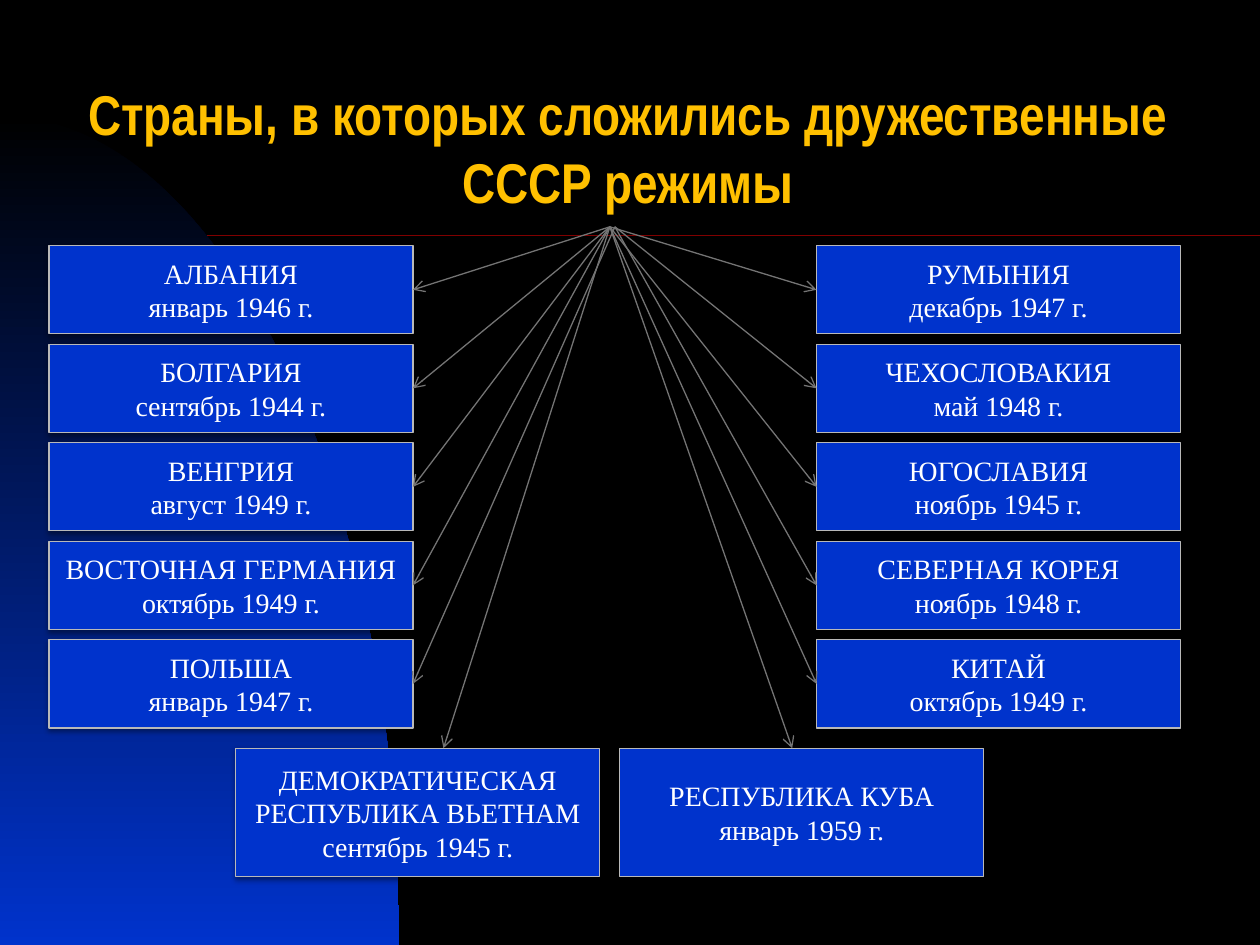
from lxml import etree
from pptx import Presentation
from pptx.dml.color import RGBColor
from pptx.enum.shapes import MSO_CONNECTOR, MSO_SHAPE
from pptx.enum.text import MSO_ANCHOR, PP_ALIGN
from pptx.oxml.ns import qn
from pptx.util import Pt

STRAIGHT = MSO_CONNECTOR.STRAIGHT
RECT = MSO_SHAPE.RECTANGLE
CENTER = PP_ALIGN.CENTER
MIDDLE, BOTTOM = MSO_ANCHOR.MIDDLE, MSO_ANCHOR.BOTTOM
LEFT_SIDE, RIGHT_SIDE = 1, 3

COLORS = {name: RGBColor.from_string(value) for name, value in {
    "black": "000000", "blue": "0033CC", "border": "B9B9B9", "rule": "800000",
    "arrow": "747474", "title": "FFC000", "white": "FFFFFF",
}.items()}

BOX_W, BOX_H = 208, 50.4
TOP, PITCH = 140.4, 56.3
HUB_X, HUB_Y = 348.5, 129.6
HUB_SHIFT = 2.9

# x, side the arrow enters, rows whose arrow starts slightly right, countries
COLUMNS = [
    (28, RIGHT_SIDE, {4}, [
        ("АЛБАНИЯ", "январь 1946 г."),
        ("БОЛГАРИЯ", "сентябрь 1944 г."),
        ("ВЕНГРИЯ", "август 1949 г."),
        ("ВОСТОЧНАЯ ГЕРМАНИЯ", "октябрь 1949 г."),
        ("ПОЛЬША", "январь 1947 г."),
    ]),
    (466.6, LEFT_SIDE, {1, 3}, [
        ("РУМЫНИЯ", "декабрь 1947 г."),
        ("ЧЕХОСЛОВАКИЯ", "май 1948 г."),
        ("ЮГОСЛАВИЯ", "ноябрь 1945 г."),
        ("СЕВЕРНАЯ КОРЕЯ", "ноябрь 1948 г."),
        ("КИТАЙ", "октябрь 1949 г."),
    ]),
]
BOTTOM_Y, BOTTOM_H = 427.6, 73.4
# x, arrow tip x, country, date
BOTTOM_ROW = [
    (134.8, 253.4, "ДЕМОКРАТИЧЕСКАЯ РЕСПУБЛИКА ВЬЕТНАМ", "сентябрь 1945 г."),
    (354.2, 452.7, "РЕСПУБЛИКА КУБА", "январь 1959 г."),
]


def add_box(x, y, h, lines):
    sp = s.shapes.add_shape(RECT, Pt(x), Pt(y), Pt(BOX_W), Pt(h))
    sp.fill.solid()
    sp.fill.fore_color.rgb = COLORS["blue"]
    sp.line.color.rgb = COLORS["border"]
    sp.line.width = Pt(0.75)
    sp.shadow.inherit = False
    effects = sp._element.spPr.find(qn("a:effectLst"))
    shadow = etree.SubElement(effects, qn("a:outerShdw"), blurRad=str(Pt(3.1)),
                              dist=str(Pt(1.6)), dir="5400000", rotWithShape="0")
    color = etree.SubElement(shadow, qn("a:srgbClr"), val=str(COLORS["black"]))
    etree.SubElement(color, qn("a:alpha"), val="38000")
    tf = sp.text_frame
    tf.word_wrap = True
    tf.vertical_anchor = MIDDLE
    for i, line in enumerate(lines):
        p = tf.paragraphs[0] if i == 0 else tf.add_paragraph()
        p.alignment = CENTER
        r = p.add_run()
        r.text = line
        r.font.size = Pt(16)
        r.font.name = "Times New Roman"
        r.font.color.rgb = COLORS["white"]
    return sp


def add_line(x1, y1, x2, y2, color, width, arrow=False):
    cx = s.shapes.add_connector(STRAIGHT, Pt(x1), Pt(y1), Pt(x2), Pt(y2))
    cx.line.color.rgb = COLORS[color]
    cx.line.width = Pt(width)
    if arrow:
        etree.SubElement(cx.line._get_or_add_ln(), qn("a:tailEnd"), type="arrow")
    etree.SubElement(cx._element.spPr, qn("a:effectLst"))
    return cx


prs = Presentation()
prs.slide_width, prs.slide_height = Pt(720), Pt(540)
s = prs.slides.add_slide(prs.slide_layouts[6])
s.background.fill.solid()
s.background.fill.fore_color.rgb = COLORS["black"]

add_line(0, 134.6, 720, 134.6, "rule", 1)

# Quarter arc, sampled from a cubic Bezier curve
ARC = [(0, 66.2), (126, 66.2), (228.2, 278.6), (228.2, 540)]
STEPS = 48
points = []
for i in range(1, STEPS + 1):
    t = i / STEPS
    weights = [(1 - t) ** 3, 3 * t * (1 - t) ** 2, 3 * t ** 2 * (1 - t), t ** 3]
    points.append([Pt(sum(w * c for w, c in zip(weights, axis))) for axis in zip(*ARC)])
fb = s.shapes.build_freeform(Pt(ARC[0][0]), Pt(ARC[0][1]))
fb.add_line_segments(points + [(Pt(0), Pt(540))], close=True)
sp = fb.convert_to_shape()
sp.shadow.inherit = False
sp.line.fill.background()
sp.fill.gradient()
sp.fill.gradient_angle = 270
for stop, position, name in zip(sp.fill.gradient_stops, (0, 1), ("black", "blue")):
    stop.position = position
    stop.color.rgb = COLORS[name]

for x, side, shifted, countries in COLUMNS:
    for row, lines in enumerate(countries):
        y = TOP + row * PITCH
        box = add_box(x, y, BOX_H, lines)
        start = HUB_X + HUB_SHIFT * (row in shifted)
        tip = x + BOX_W if side == RIGHT_SIDE else x
        cx = add_line(start, HUB_Y, tip, y + BOX_H / 2, "arrow", 0.75, arrow=True)
        cx.end_connect(box, side)

for x, tip, *lines in BOTTOM_ROW:
    add_box(x, BOTTOM_Y, BOTTOM_H, lines)
    add_line(HUB_X, HUB_Y, tip, BOTTOM_Y, "arrow", 0.75, arrow=True)

tf = s.shapes.add_textbox(Pt(36.7), Pt(43.2), Pt(644.4), Pt(82.8)).text_frame
tf.word_wrap = True
tf.vertical_anchor = BOTTOM
tf.margin_left = tf.margin_right = tf.margin_top = tf.margin_bottom = Pt(3.6)
p = tf.paragraphs[0]
p.alignment = CENTER
r = p.add_run()
r.text = "Страны, в которых сложились дружественные СССР режимы"
r.font.size = Pt(32)
r.font.name = "Arial Narrow"
r.font.bold = True
r.font.color.rgb = COLORS["title"]

prs.save("out.pptx")
